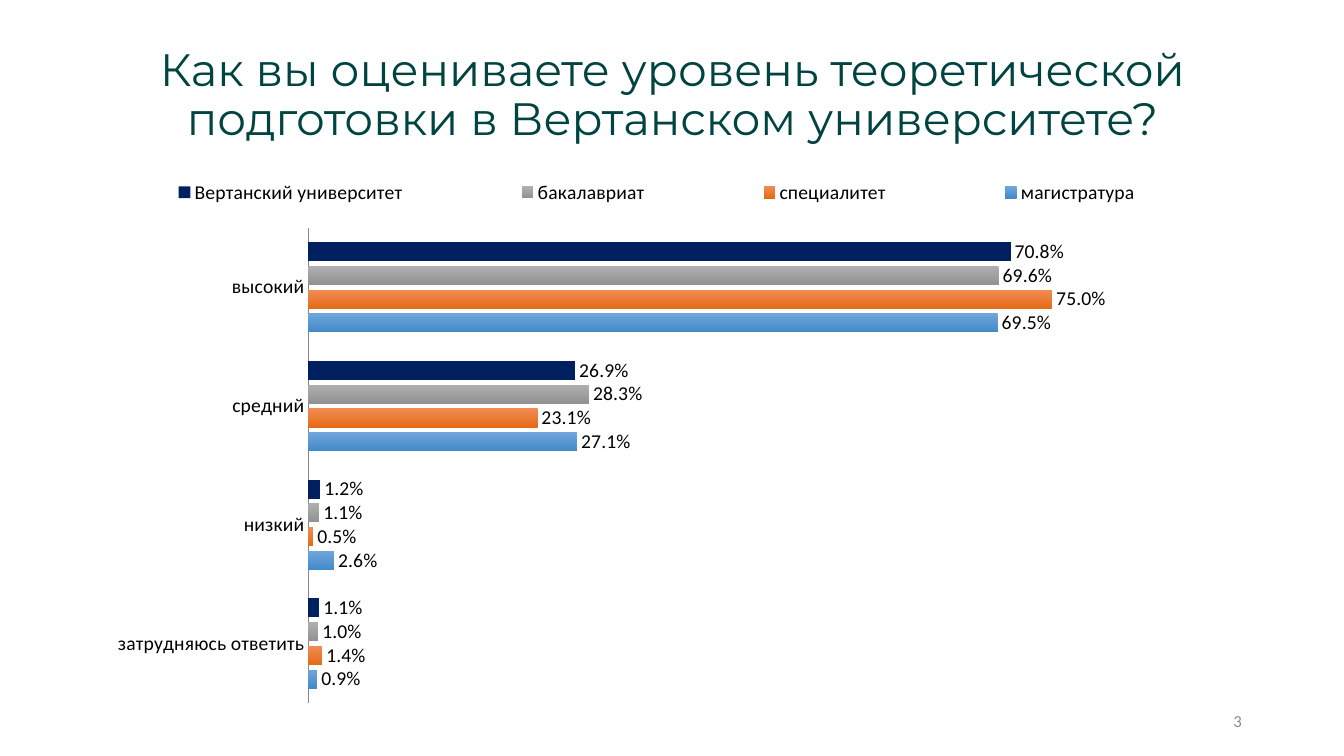
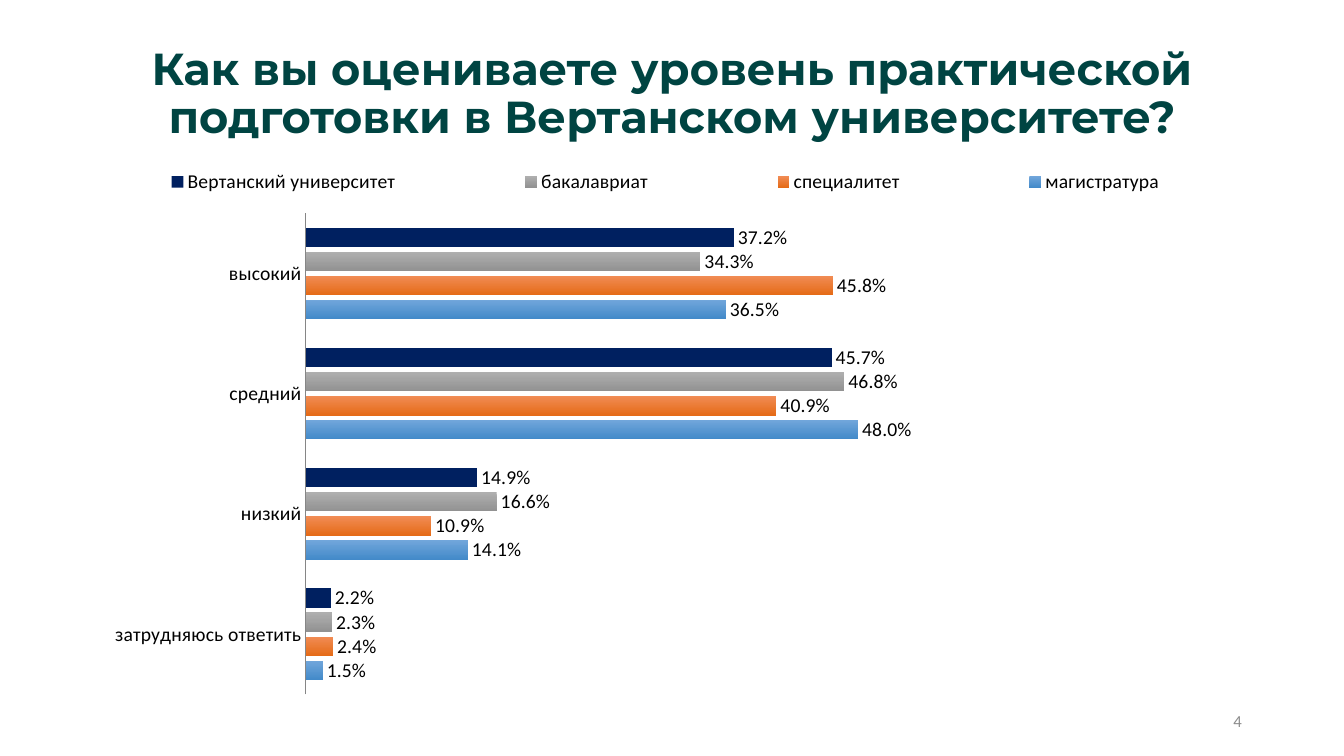
from dataclasses import dataclass

from lxml import etree
from pptx import Presentation
from pptx.chart.data import CategoryChartData
from pptx.dml.color import RGBColor
from pptx.enum.chart import XL_CHART_TYPE, XL_LABEL_POSITION, XL_LEGEND_POSITION, XL_TICK_MARK
from pptx.enum.text import MSO_ANCHOR, MSO_AUTO_SIZE, PP_ALIGN
from pptx.oxml.ns import qn
from pptx.util import Cm, Pt

BAR_CLUSTERED = XL_CHART_TYPE.BAR_CLUSTERED
OUTSIDE_END = XL_LABEL_POSITION.OUTSIDE_END
LEGEND_TOP = XL_LEGEND_POSITION.TOP
NO_TICK = XL_TICK_MARK.NONE
MIDDLE = MSO_ANCHOR.MIDDLE
NO_FIT = MSO_AUTO_SIZE.NONE
CENTER, RIGHT = PP_ALIGN.CENTER, PP_ALIGN.RIGHT

TITLE_ONLY = 5
TITLE_FONT, BODY_FONT = "Montserrat", "Calibri"
PERCENT = "0.0%"
COLORS = {
    "title": "004442",
    "number": "8C8C8C",
    "text": "000000",
    "axis": "868686",
    "navy": "002060",
}
CATEGORIES = ("затрудняюсь ответить", "низкий", "средний", "высокий")


@dataclass(frozen=True)
class SeriesStyle:
    name: str
    top: str
    bottom: str


SERIES = (
    SeriesStyle("магистратура", "71A6DB", "438AC9"),
    SeriesStyle("специалитет", "F18C55", "E56B17"),
    SeriesStyle("бакалавриат", "AFAFAF", "929292"),
    SeriesStyle("Вертанский университет", COLORS["navy"], COLORS["navy"]),
)


@dataclass(frozen=True)
class Box:
    """Left, top, width and height: Cm on a slide, percent inside a chart."""
    x: float
    y: float
    w: float
    h: float

    def lengths(self) -> tuple[Cm, Cm, Cm, Cm]:
        return Cm(self.x), Cm(self.y), Cm(self.w), Cm(self.h)


@dataclass(frozen=True)
class Question:
    number: int
    title: str
    title_size: float
    bold: bool
    title_box: Box
    chart_box: Box
    plot: Box
    legend: Box
    axis_max: float
    values: tuple[tuple[float, ...], ...]


NUMBER_BOX = Box(23.93, 17.65, 7.62, 1.02)
QUESTIONS = (
    Question(
        3, "Как вы оцениваете уровень теоретической подготовки в Вертанском университете?",
        32.4, False,
        Box(2.34, 1.02, 29.21, 2.82), Box(1.27, 4.19, 30.53, 13.97),
        Box(21.3, 11.1, 65.5, 85.7), Box(1.3, 1.2, 97.5, 7), 0.8,
        ((0.009, 0.026, 0.271, 0.695), (0.014, 0.005, 0.231, 0.75),
         (0.01, 0.011, 0.283, 0.696), (0.011, 0.012, 0.269, 0.708)),
    ),
    Question(
        4, "Как вы оцениваете уровень практической подготовки в Вертанском университете?",
        32, True,
        Box(2.34, 0.56, 29.21, 3.68), Box(0.97, 3.78, 31.6, 14.35),
        Box(21.3, 11.1, 55.1, 84.5), Box(0.8, 2.1, 98.4, 7), 0.6,
        ((0.015, 0.141, 0.48, 0.365), (0.024, 0.109, 0.409, 0.458),
         (0.023, 0.166, 0.468, 0.343), (0.022, 0.149, 0.457, 0.372)),
    ),
)


def rgb(value: str) -> RGBColor:
    return RGBColor.from_string(value)


def style_font(font, name: str, size: float, color: str, bold: bool = False) -> None:
    font.name, font.size, font.bold = name, Pt(size), bold
    font.color.rgb = rgb(color)


def add_title(s, q: Question) -> None:
    title = s.shapes.title
    title.left, title.top, title.width, title.height = q.title_box.lengths()
    tf = title.text_frame
    tf.auto_size, tf.word_wrap, tf.vertical_anchor = NO_FIT, True, MIDDLE
    p = tf.paragraphs[0]
    p.alignment, p.line_spacing = CENTER, 0.9
    r = p.add_run()
    r.text = q.title
    style_font(r.font, TITLE_FONT, q.title_size, COLORS["title"], q.bold)


def add_number(s, number: int) -> None:
    tf = s.shapes.add_textbox(*NUMBER_BOX.lengths()).text_frame
    tf.word_wrap, tf.vertical_anchor = True, MIDDLE
    p = tf.paragraphs[0]
    p.alignment = RIGHT
    r = p.add_run()
    r.text = str(number)
    style_font(r.font, BODY_FONT, 12, COLORS["number"])


def set_layout(parent, index: int, box: Box, inner: bool = False) -> None:
    """Give a chart part a manual layout, as its child at the index."""
    for old in parent.findall(qn("c:layout")):
        parent.remove(old)
    layout = etree.Element(qn("c:layout"))
    parent.insert(index, layout)
    manual = etree.SubElement(layout, qn("c:manualLayout"))
    settings = [("layoutTarget", "inner")] if inner else []
    settings += [("xMode", "edge"), ("yMode", "edge")]
    settings += [(key, str(round(getattr(box, key) / 100, 3))) for key in "xywh"]
    for tag, value in settings:
        etree.SubElement(manual, qn(f"c:{tag}")).set("val", value)


def style_series(series, style: SeriesStyle) -> None:
    fill = series.format.fill
    if style.top == style.bottom:
        fill.solid()
        fill.fore_color.rgb = rgb(style.top)
    else:
        fill.gradient()
        fill.gradient_angle = 270
        for stop, color in zip(fill.gradient_stops, (style.top, style.bottom)):
            stop.color.rgb = rgb(color)
    series.invert_if_negative = False
    labels = series.data_labels
    labels.show_value = True
    labels.number_format, labels.number_format_is_linked = PERCENT, False
    labels.position = OUTSIDE_END
    style_font(labels.font, BODY_FONT, 14, COLORS["text"])


def add_bar_chart(s, q: Question) -> None:
    data = CategoryChartData(number_format=PERCENT)
    data.categories = CATEGORIES
    for style, values in zip(SERIES, q.values):
        data.add_series(style.name, values)
    chart = s.shapes.add_chart(BAR_CLUSTERED, *q.chart_box.lengths(), data).chart
    style_font(chart.font, BODY_FONT, 14, COLORS["text"])
    chart.has_title = False

    plot = chart.plots[0]
    plot.gap_width, plot.overlap, plot.vary_by_categories = 150, -25, False
    for series, style in zip(plot.series, SERIES):
        style_series(series, style)

    axis = chart.category_axis
    axis.major_tick_mark = axis.minor_tick_mark = NO_TICK
    axis.format.line.color.rgb = rgb(COLORS["axis"])
    axis.format.line.width = Pt(0.75)
    axis = chart.value_axis
    axis.minimum_scale, axis.maximum_scale = 0, q.axis_max
    axis.has_major_gridlines = axis.visible = False
    axis.tick_labels.number_format = PERCENT
    axis.tick_labels.number_format_is_linked = False

    chart.has_legend = True
    chart.legend.position = LEGEND_TOP
    chart.legend.include_in_layout = False
    style_font(chart.legend.font, BODY_FONT, 14, COLORS["text"])
    root = chart.element.find(qn("c:chart"))
    set_layout(root.find(qn("c:plotArea")), 0, q.plot, inner=True)
    set_layout(root.find(qn("c:legend")), 1, q.legend)


def main() -> None:
    prs = Presentation()
    prs.slide_width, prs.slide_height = Cm(33.87), Cm(19.05)
    for q in QUESTIONS:
        s = prs.slides.add_slide(prs.slide_layouts[TITLE_ONLY])
        add_title(s, q)
        add_number(s, q.number)
        add_bar_chart(s, q)
    prs.save("out.pptx")


if __name__ == "__main__":
    main()
